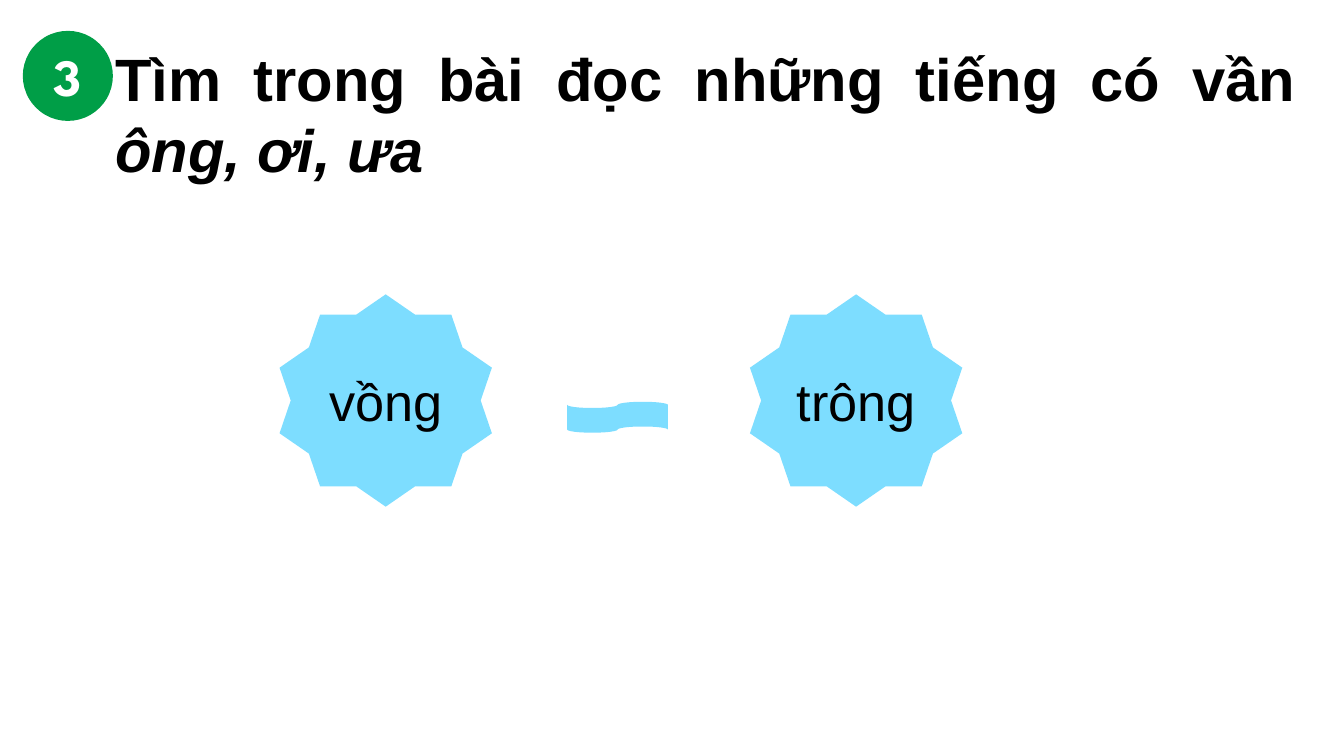
from dataclasses import dataclass

from pptx import Presentation
from pptx import util as u
from pptx.dml.color import RGBColor
from pptx.enum import shapes, text

GREEN, SKY, BLACK, WHITE = "009E47", "7DDDFF", "000000", "FFFFFF"
SHAPE = shapes.MSO_SHAPE


@dataclass
class Figure:
    kind: SHAPE
    left: float
    top: float
    width: float
    height: float
    fill: str
    label: str = ""
    font: str = "Arial"
    color: str = BLACK
    bold: bool = False


def rgb(value: str) -> RGBColor:
    return RGBColor.from_string(value)


def add_span(para, content: str, color: str, **formats) -> None:
    span = para.add_run()
    span.text = content
    span.font.color.rgb = rgb(color)
    for name, value in formats.items():
        setattr(span.font, name, value)


def set_frame(frame, inset_x: float, inset_y: float, **formats) -> None:
    settings = dict(
        margin_left=u.Inches(inset_x), margin_right=u.Inches(inset_x),
        margin_top=u.Inches(inset_y), margin_bottom=u.Inches(inset_y),
        word_wrap=True, **formats)
    for name, value in settings.items():
        setattr(frame, name, value)


def draw_figure(page, item: Figure) -> None:
    shape = page.shapes.add_shape(
        item.kind, u.Inches(item.left), u.Inches(item.top),
        u.Inches(item.width), u.Inches(item.height))
    shape.shadow.inherit = False
    shape.fill.solid()
    shape.fill.fore_color.rgb = rgb(item.fill)
    shape.line.fill.background()
    if item.label:
        set_frame(shape.text_frame, 0, 0, vertical_anchor=text.MSO_ANCHOR.MIDDLE)
        para = shape.text_frame.paragraphs[0]
        para.alignment = text.PP_ALIGN.CENTER
        add_span(para, item.label, item.color, name=item.font,
                 size=u.Pt(28), bold=item.bold)


def draw_heading(page) -> None:
    box = page.shapes.add_textbox(
        u.Inches(0.76), u.Inches(0.26), u.Inches(8.99), u.Inches(1.18))
    set_frame(box.text_frame, 0.1, 0.05,
              auto_size=text.MSO_AUTO_SIZE.SHAPE_TO_FIT_TEXT)
    para = box.text_frame.paragraphs[0]
    para.alignment = text.PP_ALIGN.JUSTIFY
    style = dict(name="Arial", size=u.Pt(32), bold=True)
    add_span(para, "Tìm trong bài đọc những tiếng có vần ", BLACK, **style)
    add_span(para, "ông, ơi, ưa", BLACK, italic=True, **style)


def main() -> None:
    # Widescreen page, 16 to 9
    deck = Presentation()
    deck.slide_width = u.Inches(10)
    deck.slide_height = u.Inches(10 * 9 / 16)
    page = deck.slides.add_slide(deck.slide_layouts[6])

    # Exercise heading and its number badge
    draw_heading(page)
    draw_figure(page, Figure(SHAPE.OVAL, 0.17, 0.23, 0.67, 0.67, GREEN,
                             "3", "League Spartan", WHITE, True))

    # Pair of rhyming words
    for index, word in enumerate(("vồng", "trông")):
        draw_figure(page, Figure(SHAPE.STAR_10_POINT, 2.08 + 3.5 * index, 2.19,
                                 1.58, 1.58, SKY, word))

    # Wavy dash between the words
    draw_figure(page, Figure(SHAPE.FLOWCHART_PUNCHED_TAPE,
                             4.22, 2.99, 0.75, 0.23, SKY))

    deck.save("out.pptx")


if __name__ == "__main__":
    main()
